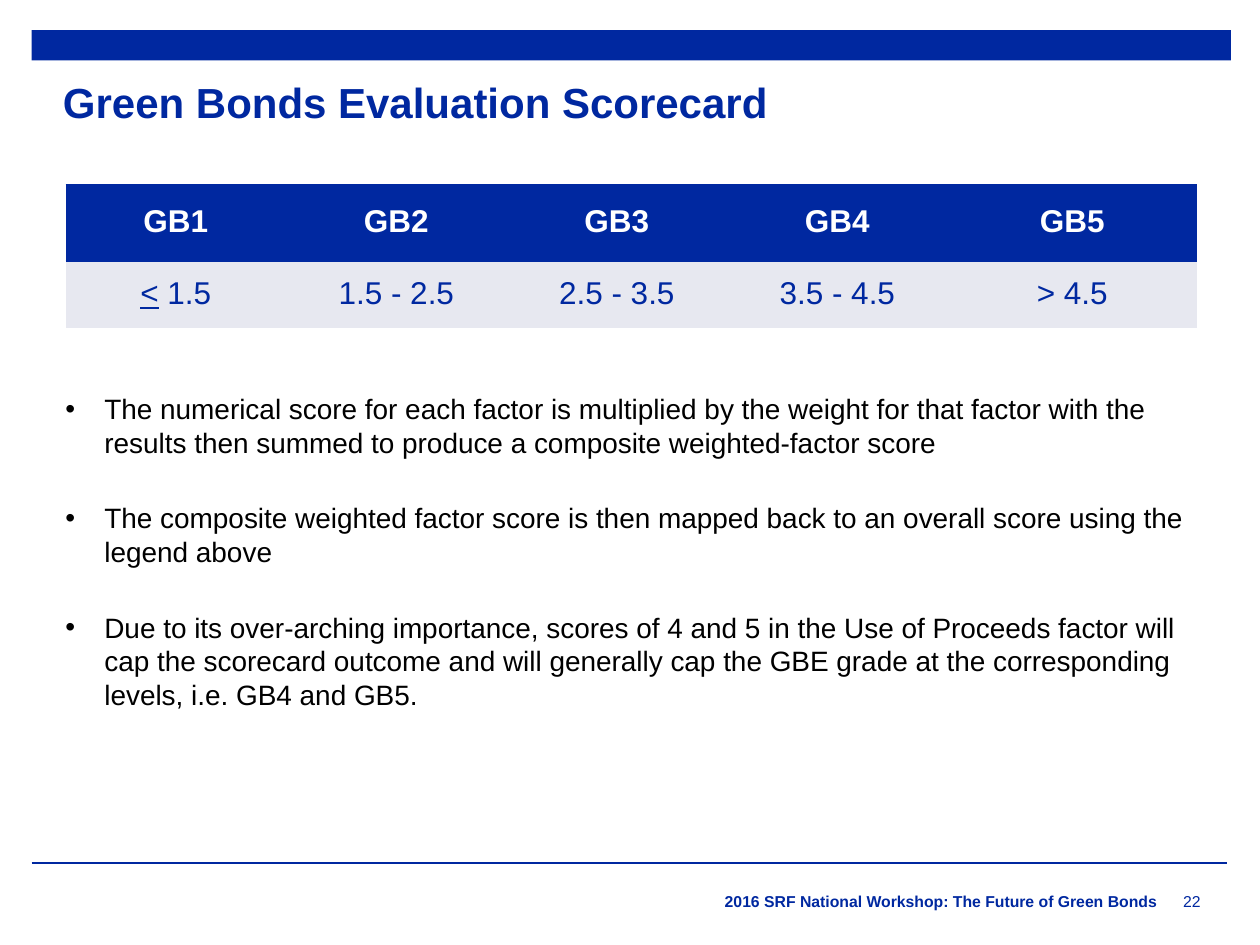
from dataclasses import dataclass, field

from lxml.etree import SubElement
from pptx import Presentation
from pptx.dml.color import RGBColor
from pptx.enum.shapes import MSO_CONNECTOR, MSO_SHAPE
from pptx.enum.text import MSO_ANCHOR, PP_ALIGN
from pptx.oxml import parse_xml
from pptx.oxml.ns import nsdecls, qn
from pptx.util import Inches, Pt

COLORS = {"blue": "0028A0", "pale": "E7E8F0", "white": "FFFFFF", "black": "000000"}
FONT = "Arial"
SLIDE_WIDTH, SLIDE_HEIGHT = Inches(10), Inches(7.5)
GRID_COLUMNS, GRID_ROWS = 1000, 750
PLAIN_TABLE_STYLE = "{2D5ABB26-0587-4C30-8999-92F81FD0307C}"


@dataclass(frozen=True)
class Area:
    """A rectangle in columns and rows of the slide grid."""
    column: int
    row: int
    columns: int
    rows: int

    def emu(self) -> tuple[int, int, int, int]:
        return across(self.column), down(self.row), across(self.columns), down(self.rows)


@dataclass(frozen=True)
class TextStyle:
    size: int
    color: str = "blue"
    bold: bool = False
    paragraph: dict = field(default_factory=dict)


@dataclass(frozen=True)
class Label:
    text: str
    area: Area
    style: TextStyle


@dataclass(frozen=True)
class ScoreRow:
    cells: tuple[str, ...]
    height: int
    fill: str
    style: TextStyle


BANNER = Area(25, 24, 952, 24)
FOOTER_RULE = Area(25, 685, 949, 0)
LABELS = (
    Label("2016 SRF National Workshop: The Future of Green Bonds", Area(479, 708, 439, 17),
          TextStyle(9, bold=True, paragraph={"alignment": PP_ALIGN.RIGHT})),
    Label("Green Bonds Evaluation Scorecard", Area(50, 67, 900, 34),
          TextStyle(24, bold=True, paragraph={"line_spacing": 0.85})),
    Label("22", Area(939, 708, 47, 17), TextStyle(9)),
)

SCORE_AREA = Area(52, 147, 898, 113)
SCORE_COLUMNS = (175, 175, 175, 175, 198)
SCORE_ROWS = (
    ScoreRow(tuple(f"GB{grade}" for grade in range(1, 6)), 60, "blue",
             TextStyle(18, "white", True,
                       {"alignment": PP_ALIGN.CENTER, "line_spacing": 0.9})),
    ScoreRow(("< 1.5", "1.5 - 2.5", "2.5 - 3.5", "3.5 - 4.5", "> 4.5"), 53, "pale",
             TextStyle(18, paragraph={"alignment": PP_ALIGN.CENTER, "line_spacing": 0.95})),
)

NOTES_AREA = Area(42, 306, 925, 320)
NOTES_STYLE = TextStyle(16, "black")
NOTES = (
    "The numerical score for each factor is multiplied by the weight for that factor with "
    "the results then summed to produce a composite weighted-factor score",
    "The composite weighted factor score is then mapped back to an overall score using the "
    "legend above",
    "Due to its over-arching importance, scores of 4 and 5 in the Use of Proceeds factor "
    "will cap the scorecard outcome and will generally cap the GBE grade at the "
    "corresponding levels, i.e. GB4 and GB5.",
)


def across(columns: int) -> int:
    return round(SLIDE_WIDTH * columns / GRID_COLUMNS)


def down(rows: int) -> int:
    return round(SLIDE_HEIGHT * rows / GRID_ROWS)


def rgb(name: str) -> RGBColor:
    return RGBColor.from_string(COLORS[name])


def apply(target, values: dict) -> None:
    for attribute, value in values.items():
        setattr(target, attribute, value)


def add_styled_run(paragraph, text: str, style: TextStyle, underline: bool = False) -> None:
    run = paragraph.add_run()
    run.text = text
    apply(run.font, {"name": FONT, "size": Pt(style.size), "bold": style.bold,
                     "underline": underline})
    run.font.color.rgb = rgb(style.color)


def draw_banner(slide) -> None:
    banner = slide.shapes.add_shape(MSO_SHAPE.RECTANGLE, *BANNER.emu())
    banner.shadow.inherit = False
    banner.fill.solid()
    banner.fill.fore_color.rgb = rgb("blue")
    banner.line.fill.background()


def draw_footer_rule(slide) -> None:
    left, top, width, height = FOOTER_RULE.emu()
    rule = slide.shapes.add_connector(
        MSO_CONNECTOR.STRAIGHT, left, top, left + width, top + height)
    rule.line.color.rgb = rgb("blue")
    rule.line.width = Pt(1)
    SubElement(rule._element.spPr, qn("a:effectLst"))


def draw_label(slide, label: Label) -> None:
    frame = slide.shapes.add_textbox(*label.area.emu()).text_frame
    apply(frame, {"word_wrap": True, "margin_left": 0, "margin_right": 0,
                  "margin_top": 0, "margin_bottom": 0})
    paragraph = frame.paragraphs[0]
    apply(paragraph, label.style.paragraph)
    add_styled_run(paragraph, label.text, label.style)


def add_top_border(cell) -> None:
    border = parse_xml(
        f'<a:lnT {nsdecls("a")} w="{Pt(1)}"><a:solidFill>'
        f'<a:srgbClr val="{COLORS["blue"]}"/></a:solidFill></a:lnT>')
    cell._tc.get_or_add_tcPr().insert(0, border)


def fill_score_cell(cell, text: str, row: ScoreRow) -> None:
    apply(cell, {"vertical_anchor": MSO_ANCHOR.MIDDLE, "margin_left": across(7),
                 "margin_right": across(7), "margin_top": 0, "margin_bottom": 0})
    cell.fill.solid()
    cell.fill.fore_color.rgb = rgb(row.fill)
    add_top_border(cell)
    paragraph = cell.text_frame.paragraphs[0]
    apply(paragraph, row.style.paragraph)
    if text.startswith("<"):  # underlined to read as "less than or equal"
        add_styled_run(paragraph, text[0], row.style, underline=True)
        text = text[1:]
    add_styled_run(paragraph, text, row.style)


def draw_scores(slide) -> None:
    scores = slide.shapes.add_table(
        len(SCORE_ROWS), len(SCORE_COLUMNS), *SCORE_AREA.emu()).table
    scores.horz_banding = False
    scores._tbl.tblPr.find(qn("a:tableStyleId")).text = PLAIN_TABLE_STYLE
    for column, width in zip(scores.columns, SCORE_COLUMNS):
        column.width = across(width)
    for table_row, row in zip(scores.rows, SCORE_ROWS):
        table_row.height = down(row.height)
        for cell, text in zip(table_row.cells, row.cells):
            fill_score_cell(cell, text, row)


def draw_notes(slide) -> None:
    frame = slide.shapes.add_textbox(*NOTES_AREA.emu()).text_frame
    frame.word_wrap = True
    for index, note in enumerate(NOTES):
        paragraph = frame.add_paragraph() if index else frame.paragraphs[0]
        if index:
            paragraph.space_before = Pt(24)
        properties = paragraph._p.get_or_add_pPr()
        properties.set("marL", str(across(31)))
        properties.set("indent", str(-across(31)))
        SubElement(properties, qn("a:buFont"), typeface=FONT)
        SubElement(properties, qn("a:buChar"), char="•")
        add_styled_run(paragraph, note, NOTES_STYLE)


def main() -> None:
    deck = Presentation()
    deck.slide_width, deck.slide_height = SLIDE_WIDTH, SLIDE_HEIGHT
    slide = deck.slides.add_slide(deck.slide_layouts[6])
    draw_footer_rule(slide)
    draw_banner(slide)
    for label in LABELS:
        draw_label(slide, label)
    draw_scores(slide)
    draw_notes(slide)
    deck.save("out.pptx")


if __name__ == "__main__":
    main()
